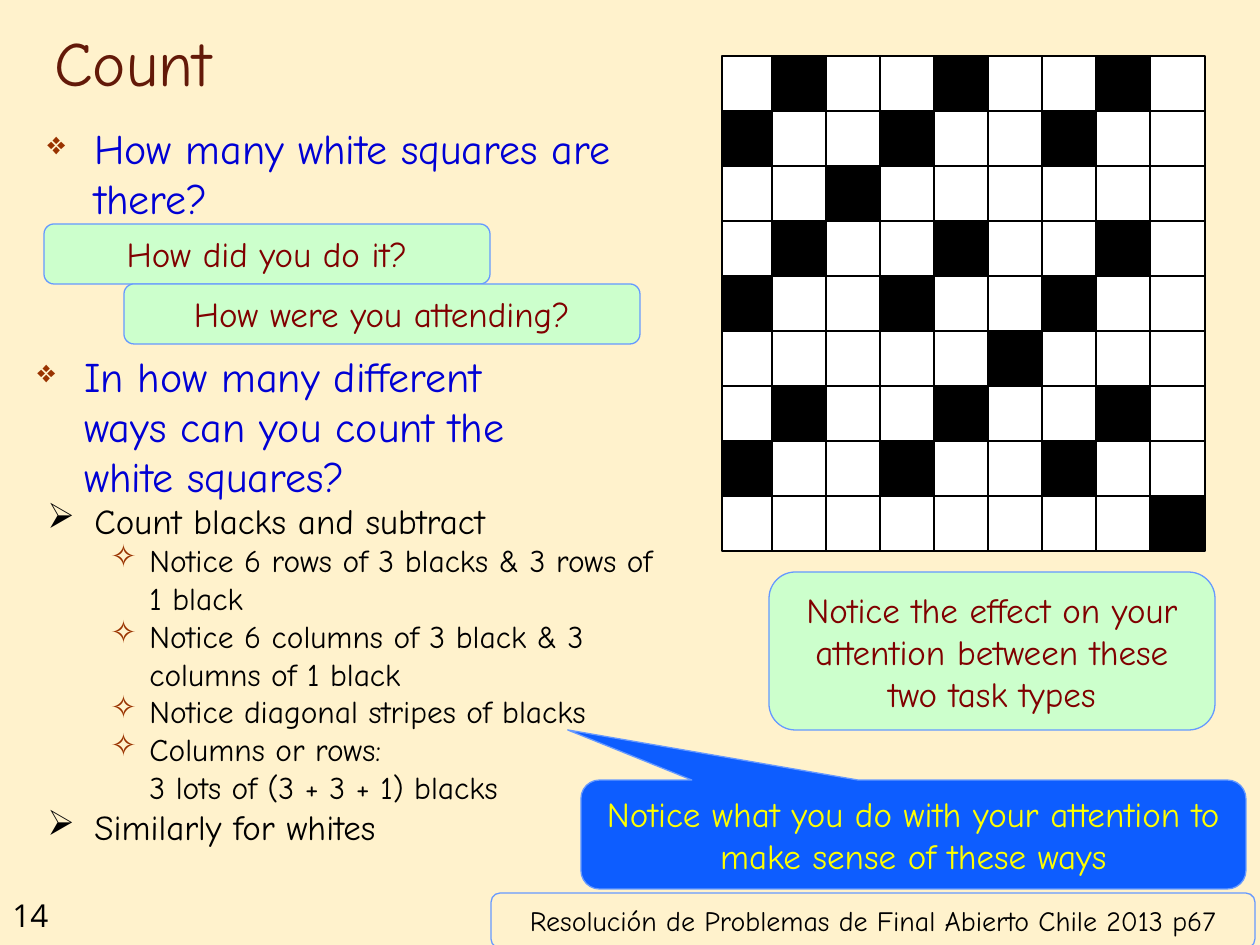
from lxml.etree import SubElement
from pptx import Presentation
from pptx.dml.color import RGBColor
from pptx.enum.shapes import MSO_SHAPE as Shape
from pptx.enum.text import MSO_ANCHOR as Anchor, PP_ALIGN as Align
from pptx.oxml.ns import qn
from pptx.util import Pt

EMU_PER_PX = 914400 / 126
BLACK, WHITE = "000000", "FFFFFF"
QUESTION_BLUE, RUST, MAROON = "0000D4", "993300", "800000"
MINT, EDGE_BLUE = "CCFFCC", "6699FF"


def px(length):
    return round(length * EMU_PER_PX)


def color(hex_string):
    return RGBColor.from_string(hex_string)


def add_bullet(paragraph, char, hue, percent, indent, hang):
    props = paragraph._p.get_or_add_pPr()
    props.set("marL", str(px(indent)))
    props.set("indent", str(-px(hang)))
    fill = SubElement(props, qn("a:buClr"))
    SubElement(fill, qn("a:srgbClr")).set("val", hue)
    SubElement(props, qn("a:buSzPct")).set("val", str(percent * 1000))
    SubElement(props, qn("a:buChar")).set("char", char)


def write(paragraph, text, size=20, hue=BLACK, font="Comic Neue",
          align=Align.LEFT, level=0, bullet=None):
    paragraph.text = text
    paragraph.alignment = align
    paragraph.level = level
    for run in paragraph.runs:
        run.font.size = Pt(size)
        run.font.name = font
        run.font.color.rgb = color(hue)
    if bullet:
        add_bullet(paragraph, **bullet)


class SlideBuilder:
    """Holds the slide and the look shared by its elements."""

    line_width = Pt(0.75)

    def __init__(self, deck, background):
        self.slide = deck.slides.add_slide(deck.slide_layouts[6])
        self.slide.background.fill.solid()
        self.slide.background.fill.fore_color.rgb = color(background)

    def shape(self, kind, box, fill=None, edge=EDGE_BLUE, parent=None):
        shapes = (parent or self.slide).shapes
        added = shapes.add_shape(kind, *map(px, box))
        added.shadow.inherit = False
        if fill:
            added.fill.solid()
            added.fill.fore_color.rgb = color(fill)
        else:
            added.fill.background()
        added.line.color.rgb = color(edge)
        added.line.width = self.line_width
        return added

    def note(self, text, box, kind=Shape.ROUNDED_RECTANGLE, fill=MINT, **style):
        """Add an outlined shape with centred text."""
        added = self.shape(kind, box, fill)
        frame = added.text_frame
        frame.word_wrap = True
        frame.vertical_anchor = Anchor.MIDDLE
        write(frame.paragraphs[0], text, align=Align.CENTER, **style)
        return added

    def text(self, box, *items, anchor=Anchor.TOP):
        """Add a text box with one paragraph per (text, style) item."""
        frame = self.slide.shapes.add_textbox(*map(px, box)).text_frame
        frame.word_wrap = True
        frame.vertical_anchor = anchor
        for index, (text, style) in enumerate(items):
            paragraph = frame.add_paragraph() if index else frame.paragraphs[0]
            write(paragraph, text, **style)

    def crossword(self, left, top, count=9):
        """Add the grid of squares; its first column is narrower."""
        grid = self.slide.shapes.add_group_shape()
        cell = 55
        for row in range(count):
            for column in range(count):
                x = left + 54 * column - (4 if column else 0)
                y = top + cell * row
                if row % 3 == 2:
                    is_black = column == row
                else:
                    is_black = (row + column) % 3 == 1
                self.shape(Shape.RECTANGLE, (x, y, cell, cell),
                           BLACK if is_black else WHITE, BLACK, grid)


def main():
    deck = Presentation()
    deck.slide_width, deck.slide_height = px(1260), px(945)
    page = SlideBuilder(deck, "FFF2CC")

    question = dict(size=24, hue=QUESTION_BLUE, bullet=dict(
        char="❖", hue=RUST, percent=75, indent=47, hang=47))
    strategy = dict(bullet=dict(
        char="➢", hue=BLACK, percent=100, indent=47, hang=47))
    detail = dict(size=18, level=1, bullet=dict(
        char="✧", hue=RUST, percent=100, indent=102, hang=39))

    page.text((0, 890, 94, 50), ("14", dict(size=18, font="Open Sans")))
    callout = page.note(
        "Notice what you do with your attention to make sense of these ways",
        (581, 780, 665, 109), Shape.ROUNDED_RECTANGULAR_CALLOUT, "0D5DFF",
        hue="FFFF00")
    callout.adjustments[0] = -0.52
    callout.adjustments[1] = -0.96
    callout.adjustments[2] = 0.17

    page.crossword(722, 56)
    page.text((42, 21, 1071, 84), ("Count", dict(size=36, hue="631908")),
              anchor=Anchor.BOTTOM)
    page.text((35, 116, 645, 118),
              ("How many white squares are there?", question))
    page.note("Notice the effect on your attention between these two task types",
              (769, 572, 446, 158), hue=MAROON)
    page.text((25, 344, 543, 179),
              ("In how many different ways can you count the white squares?",
               question))
    page.note("How did you do it?", (44, 224, 446, 60), hue=MAROON)
    page.note("How were you attending?", (124, 284, 516, 60), hue=MAROON)
    page.note("Resolución de Problemas de Final Abierto Chile 2013 p67",
              (491, 893, 764, 55), fill=None, size=16)
    page.text((35, 493, 645, 364),
              ("Count blacks and subtract", strategy),
              ("Notice 6 rows of 3 blacks & 3 rows of 1 black", detail),
              ("Notice 6 columns of 3 black & 3 columns of 1 black", detail),
              ("Notice diagonal stripes of blacks", detail),
              ("Columns or rows: \n3 lots of (3 + 3 + 1) blacks", detail),
              ("Similarly for whites", strategy))
    deck.save("out.pptx")


if __name__ == "__main__":
    main()
